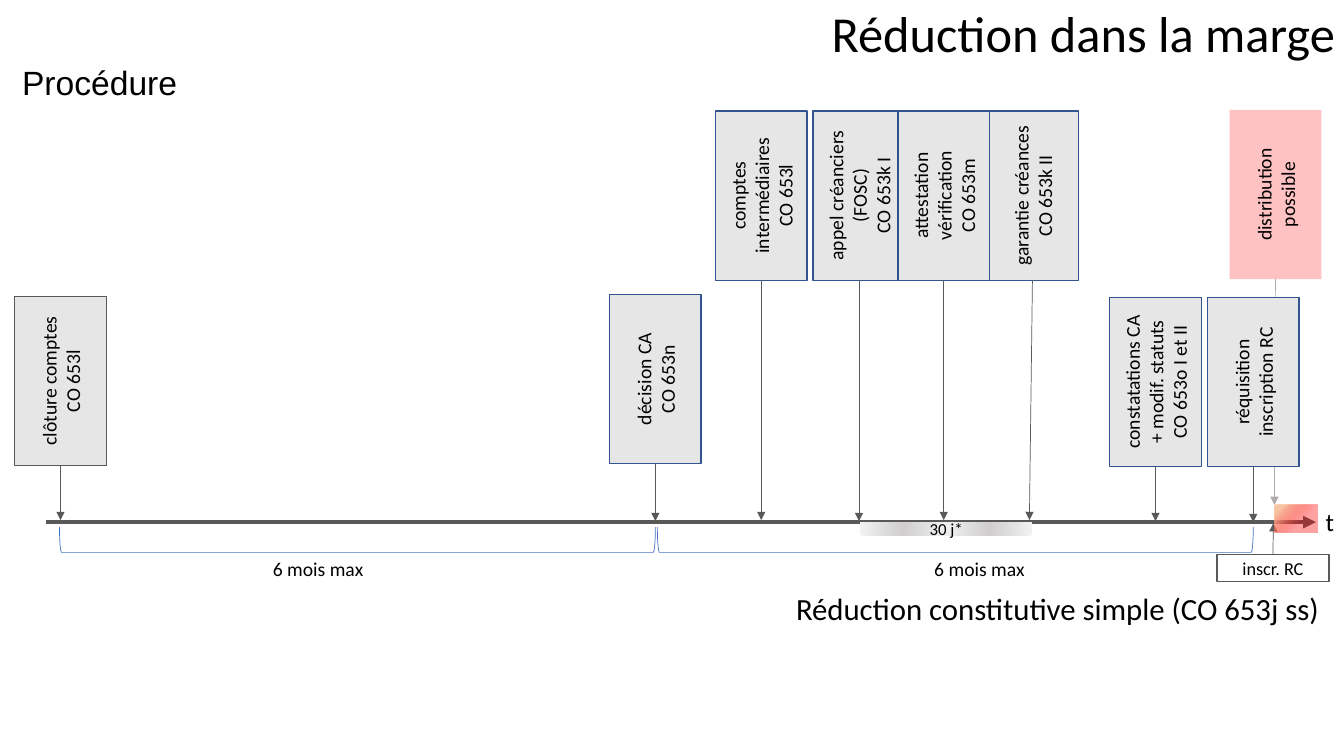
"""Build a timeline slide of the capital reduction procedure."""
from dataclasses import dataclass

from lxml.etree import SubElement
from pptx import Presentation
from pptx.dml.color import RGBColor
from pptx.enum.shapes import MSO_CONNECTOR as Connector, MSO_SHAPE as Shape
from pptx.enum.text import MSO_ANCHOR as Anchor, MSO_AUTO_SIZE as AutoSize, PP_ALIGN as Align
from pptx.oxml import parse_xml
from pptx.oxml.ns import nsdecls, qn
from pptx.util import Inches, Pt

COLORS = {
    "black": "000000",
    "step": "E7E6E6",
    "blue": "325491",
    "bracket": "4472C4",
    "dark": "595959",
    "pale": "AFABAB",
    "red": "FF0000",
    "smoke": "F2F2F2",
    "silver": "D0CECE",
    "cream": "FAD8C1",
    "peach": "F7C5A2",
}
STEP_LENGTH, STEP_DEPTH = 1.68, 0.91
UPPER, LOWER = 1.94, 3.79


@dataclass
class Step:
    text: str
    x: float
    y: float
    tip_y: float
    tip_shift: float = 0
    fill: str = "step"
    outline: str | None = "blue"
    arrow: str = "dark"
    opacity: int = 100


@dataclass
class Label:
    text: str
    area: tuple
    size: float
    align: Align = Align.LEFT
    font: str = "Calibri"
    spacing: float = 1
    wrap: bool = True


@dataclass
class Stop:
    position: int
    color: str
    opacity: int = 100


DISTRIBUTION = Step("distribution possible", 12.65, 1.93, 5.01, -0.01,
                    fill="red", outline=None, arrow="pale", opacity=24)
STEPS = [
    Step("décision CA\nCO 653n", 6.5, 3.76, 5.17),
    Step("constatations CA\n+ modif. statuts\nCO 653o I et II", 11.46, LOWER, 5.17),
    Step("réquisition inscription RC", 12.43, LOWER, 5.18),
    Step("clôture comptes\nCO 653l", 0.6, 3.78, 5.16, outline="dark"),
    Step("comptes intermédiaires\nCO 653l", 7.55, UPPER, 5.16),
    Step("appel créanciers\n(FOSC)\nCO 653k I", 8.52, UPPER, 5.17),
    Step("garantie créances\nCO 653k II", 10.24, UPPER, 5.16, -0.03),
    Step("attestation vérification\nCO 653m", 9.36, UPPER, 5.16),
]
LABELS = [
    Label("t", (13.05, 4.97, 0.29, 0.4), 18, wrap=False),
    Label("6 mois max", (2.6, 5.48, 1.11, 0.34), 14, Align.CENTER, wrap=False),
    Label("6 mois max", (9.16, 5.48, 1.11, 0.34), 14, Align.CENTER, wrap=False),
    Label("Réduction dans la marge", (0.75, 0.04, 12.59, 1.07), 36, Align.RIGHT, spacing=0.9),
    Label("Réduction constitutive simple (CO 653j ss)", (6.96, 5.84, 6.22, 1.07), 22,
          Align.RIGHT, spacing=0.9),
    Label("Procédure", (0.12, 0.61, 12.59, 1.07), 24, font="Arial", spacing=0.9),
]


def rgb(name: str) -> RGBColor:
    return RGBColor.from_string(COLORS[name])


def write_text(shape, text: str, *, size: float, font: str = "Calibri",
               align: Align = Align.CENTER, anchor: Anchor = Anchor.MIDDLE,
               spacing: float = 1, wrap: bool = True) -> None:
    frame = shape.text_frame
    frame.word_wrap = wrap
    frame.vertical_anchor = anchor
    if not wrap:
        frame.auto_size = AutoSize.SHAPE_TO_FIT_TEXT
    for index, line in enumerate(text.split("\n")):
        para = frame.add_paragraph() if index else frame.paragraphs[0]
        para.alignment = align
        para.line_spacing = spacing
        span = para.add_run()
        span.text = line
        span.font.size = Pt(size)
        span.font.name = font
        span.font.color.rgb = rgb("black")


def add_box(page, area: tuple, *, kind: Shape = Shape.RECTANGLE, fill: str | None = None,
            outline: str | None = None, width: float = 1, rotation: float = 0,
            opacity: int = 100):
    box = page.shapes.add_shape(kind, *map(Inches, area))
    box.shadow.inherit = False
    box.rotation = rotation
    if fill:
        box.fill.solid()
        box.fill.fore_color.rgb = rgb(fill)
        if opacity < 100:
            color = box.fill._xPr.find(qn("a:solidFill"))[0]
            SubElement(color, qn("a:alpha"), val=str(opacity * 1000))
    else:
        box.fill.background()
    if outline:
        box.line.color.rgb = rgb(outline)
        box.line.width = Pt(width)
    else:
        box.line.fill.background()
    return box


def set_gradient(box, stops: list[Stop], direction: str) -> None:
    marks = "".join(
        f'<a:gs pos="{stop.position * 1000}"><a:srgbClr val="{COLORS[stop.color]}">'
        f'<a:alpha val="{stop.opacity * 1000}"/></a:srgbClr></a:gs>' for stop in stops)
    gradient = parse_xml(f'<a:gradFill {nsdecls("a")} rotWithShape="1">'
                         f'<a:gsLst>{marks}</a:gsLst>{direction}</a:gradFill>')
    properties = box._element.spPr
    properties.replace(properties.find(qn("a:noFill")), gradient)


def add_arrow(page, start: tuple, end: tuple, *, color: str = "dark", width: float = 0.5):
    arrow = page.shapes.add_connector(Connector.STRAIGHT, *map(Inches, start + end))
    arrow.line.color.rgb = rgb(color)
    arrow.line.width = Pt(width)
    SubElement(arrow.line._get_or_add_ln(), qn("a:tailEnd"), type="triangle")
    SubElement(arrow._element.spPr, qn("a:effectLst"))
    return arrow


def add_step(page, step: Step) -> None:
    area = (step.x - STEP_LENGTH / 2, step.y - STEP_DEPTH / 2, STEP_LENGTH, STEP_DEPTH)
    box = add_box(page, area, fill=step.fill, outline=step.outline, rotation=270,
                  opacity=step.opacity)
    write_text(box, step.text, size=14)
    start = (step.x, step.y + STEP_LENGTH / 2)
    arrow = add_arrow(page, start, (step.x + step.tip_shift, step.tip_y), color=step.arrow)
    arrow.begin_connect(box, 1)
    arrow.begin_x, arrow.begin_y = map(Inches, start)


def add_label(page, label: Label) -> None:
    box = page.shapes.add_textbox(*map(Inches, label.area))
    write_text(box, label.text, size=label.size, font=label.font, align=label.align,
               anchor=Anchor.TOP, spacing=label.spacing, wrap=label.wrap)


def main() -> None:
    deck = Presentation()
    deck.slide_width, deck.slide_height = Inches(13.33), Inches(7.5)
    page = deck.slides.add_slide(deck.slide_layouts[6])

    add_step(page, DISTRIBUTION)
    add_arrow(page, (0.46, 5.18), (13.05, 5.18), width=3)
    for step in STEPS:
        add_step(page, step)
    for left in (3.42, 9.35):
        add_box(page, (left, 2.4, 0.25, 5.91), kind=Shape.LEFT_BRACKET,
                outline="bracket", width=0.5, rotation=270)

    notice = add_box(page, (8.53, 5.18, 1.71, 0.13))
    set_gradient(notice, [Stop(0, "smoke"), Stop(50, "silver"), Stop(100, "smoke")],
                 '<a:path path="circle"><a:fillToRect l="50000" t="50000" r="50000" '
                 'b="50000"/></a:path>')
    write_text(notice, "30 j*", size=12)

    registration = add_box(page, (12.07, 5.5, 1.11, 0.27), outline="dark")
    write_text(registration, "inscr. RC", size=13)
    add_arrow(page, (12.63, 5.5), (12.63, 5.19)).begin_connect(registration, 0)

    for label in LABELS:
        add_label(page, label)
    period = add_box(page, (12.64, 5.01, 0.43, 0.27))
    set_gradient(period, [Stop(0, "cream"), Stop(6, "peach"), Stop(15, "peach"),
                          Stop(61, "red", 37)], '<a:lin ang="2700000" scaled="0"/>')
    deck.save("out.pptx")


if __name__ == "__main__":
    main()
